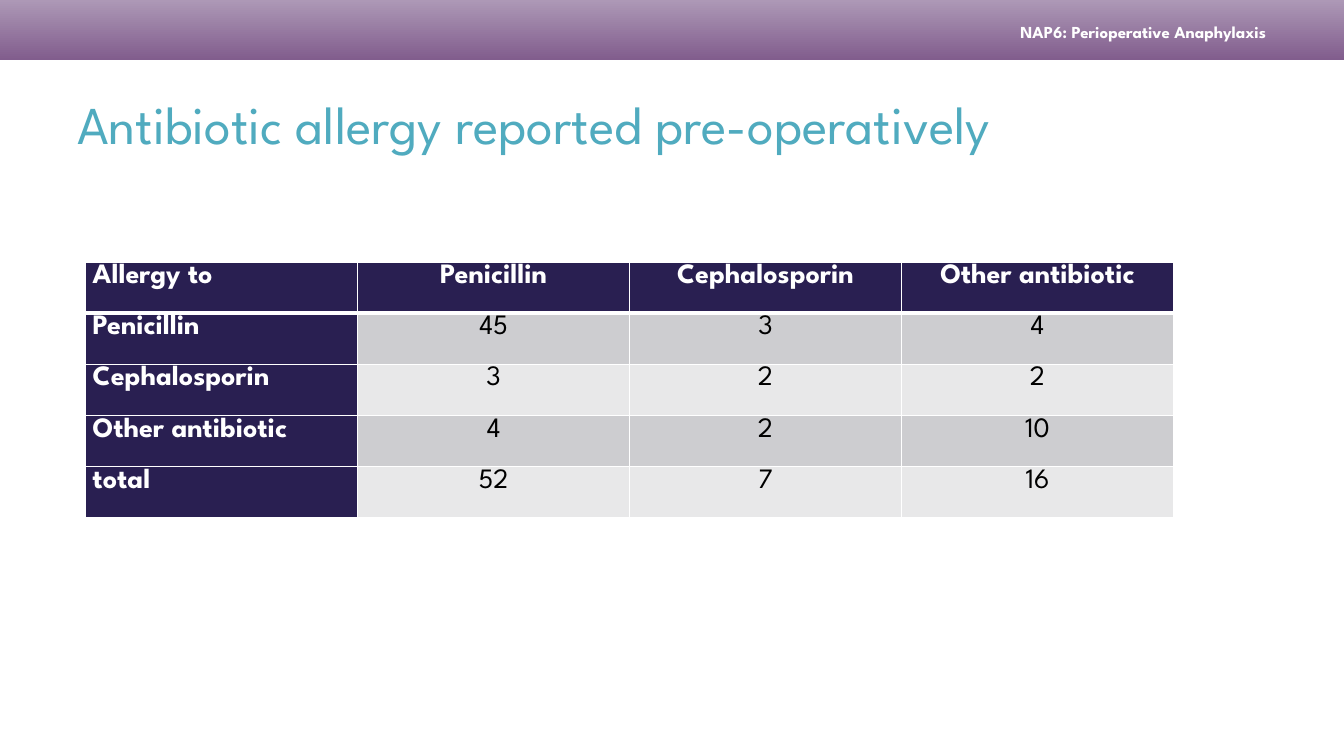
from lxml import etree
from pptx import Presentation
from pptx.dml.color import RGBColor
from pptx.enum.shapes import MSO_SHAPE
from pptx.enum.text import MSO_ANCHOR, PP_ALIGN
from pptx.oxml.ns import qn
from pptx.util import Inches, Pt

RECT = MSO_SHAPE.RECTANGLE
MIDDLE = MSO_ANCHOR.MIDDLE
LEFT, CENTER, RIGHT = PP_ALIGN.LEFT, PP_ALIGN.CENTER, PP_ALIGN.RIGHT

FONT = "League Spartan"
WIDTH, HEIGHT = 13.33, 7.5
COLORS = {
    "band_dark": "815D8D",
    "band_light": "AD98B6",
    "title": "50ABBF",
    "heading": "291F51",
    "odd_row": "CDCDD0",
    "even_row": "E8E8E9",
    "white": "FFFFFF",
    "black": "000000",
}
ALLERGIES = [
    ["Allergy to", "Penicillin", "Cephalosporin", "Other antibiotic"],
    ["Penicillin", "45", "3", "4"],
    ["Cephalosporin", "3", "2", "2"],
    ["Other antibiotic", "4", "2", "10"],
    ["total", "52", "7", "16"],
]


def rgb(name):
    return RGBColor.from_string(COLORS[name])


def style(p, size, color, bold=False, align=LEFT):
    p.alignment = align
    p.font.name = FONT
    p.font.size = Pt(size)
    p.font.bold = bold
    p.font.color.rgb = rgb(color)


def add_text(slide, box, text, size, color, bold=False, align=LEFT, right_inset=0.1):
    tf = slide.shapes.add_textbox(*map(Inches, box)).text_frame
    tf.word_wrap = True
    tf.vertical_anchor = MIDDLE
    tf.margin_right = Inches(right_inset)
    p = tf.paragraphs[0]
    p.text = text
    style(p, size, color, bold, align)


def add_header(slide, left, top, width, height):
    sp = slide.shapes.add_shape(RECT, *map(Inches, (left, top, width, height)))
    sp.shadow.inherit = False
    sp.line.fill.background()
    sp.fill.gradient()
    sp.fill.gradient_angle = 90
    for stop, name in zip(sp.fill.gradient_stops, ("band_dark", "band_light")):
        stop.color.rgb = rgb(name)
    label = (left + width - 4.98, top + 0.3 * height, 4.45, 0.28)
    add_text(slide, label, "NAP6: Perioperative Anaphylaxis", 12, "white", True, RIGHT, 0.24)


def add_borders(cell, bottom):
    tc_pr = cell._tc.get_or_add_tcPr()
    for i, (side, width) in enumerate((("L", 1), ("R", 1), ("T", 1), ("B", bottom))):
        ln = etree.Element(qn(f"a:ln{side}"), w=str(Pt(width)))
        fill = etree.SubElement(ln, qn("a:solidFill"))
        etree.SubElement(fill, qn("a:srgbClr"), val=COLORS["white"])
        tc_pr.insert(i, ln)


def add_allergy_table(slide, left, top, width, height):
    rows, cols = len(ALLERGIES), len(ALLERGIES[0])
    frame = slide.shapes.add_table(rows, cols, *map(Inches, (left, top, width, height)))
    for r, values in enumerate(ALLERGIES):
        for c, value in enumerate(values):
            heading = r == 0 or c == 0
            cell = frame.table.cell(r, c)
            cell.margin_left = cell.margin_right = Inches(0.07)
            cell.margin_top = cell.margin_bottom = 0
            cell.fill.solid()
            band = "odd_row" if r % 2 else "even_row"
            cell.fill.fore_color.rgb = rgb("heading" if heading else band)
            add_borders(cell, 1 if r else 3)
            p = cell.text_frame.paragraphs[0]
            p.text = value
            p.line_spacing = 1.07
            style(p, 20, "white" if heading else "black", heading, CENTER if c else LEFT)


def main():
    prs = Presentation()
    prs.slide_width, prs.slide_height = Inches(WIDTH), Inches(HEIGHT)
    slide = prs.slides.add_slide(prs.slide_layouts[6])
    add_header(slide, 0, 0, WIDTH, 0.08 * HEIGHT)
    title = (0.05 * WIDTH, 0.08 * HEIGHT, 0.9 * WIDTH, 1.25)
    add_text(slide, title, "Antibiotic allergy reported pre-operatively", 38, "title")
    add_allergy_table(slide, 0.85, 2.6, 10.79, 2.54)
    prs.save("out.pptx")


if __name__ == "__main__":
    main()
